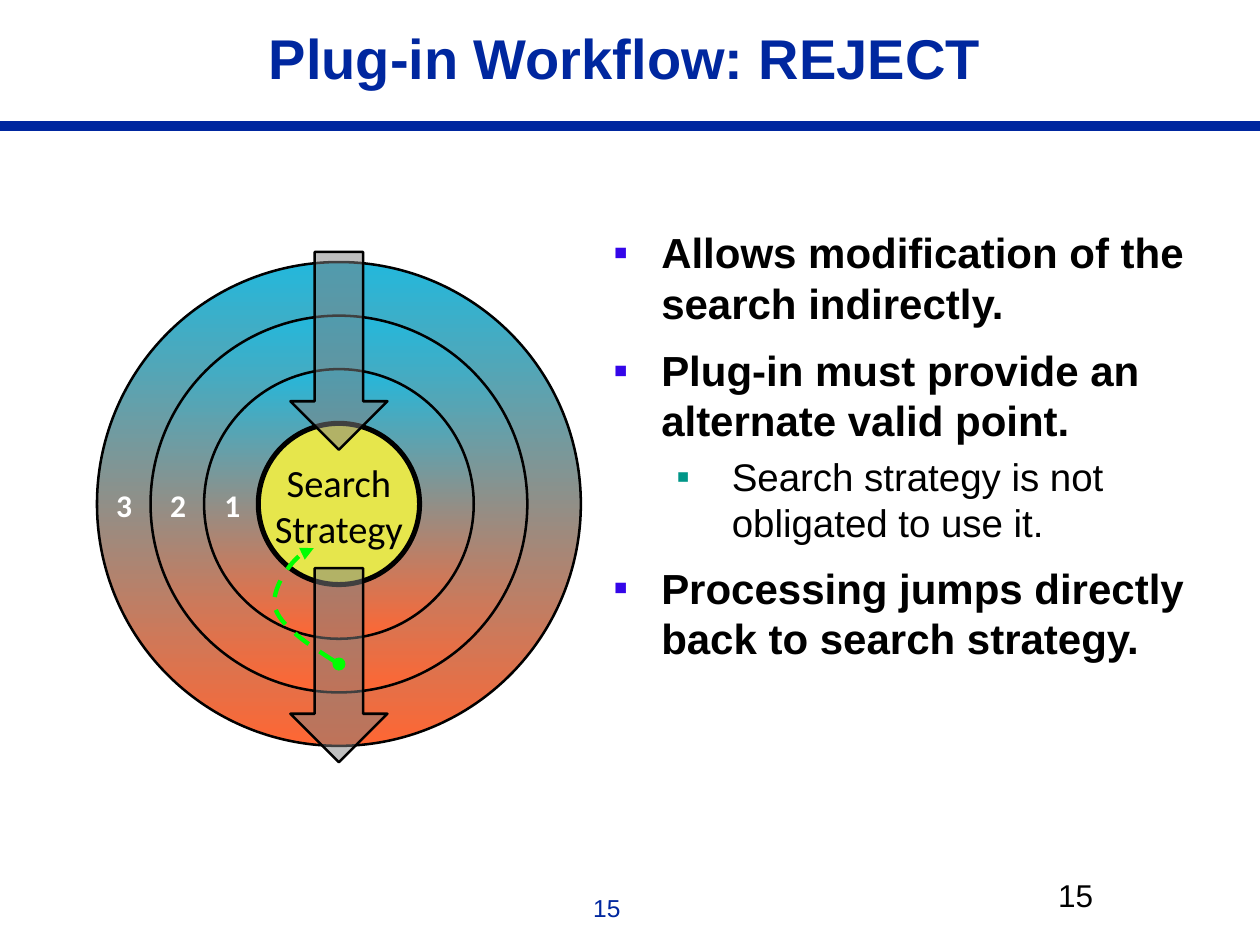
import pptx
import pptx.util
import pptx.dml.color
import pptx.enum.dml
import pptx.enum.shapes
import pptx.enum.text
import pptx.oxml
import pptx.oxml.ns
from pptx.util import Inches

NAVY, BLACK, WHITE, GREEN = "00279F", "000000", "FFFFFF", "00FF00"
CENTER_X, CENTER_Y = 2.69, 4.0
RING_DIAMETERS = (3.84, 2.99, 2.14)
SHAPES = pptx.enum.shapes.MSO_SHAPE
CENTERED = pptx.enum.text.PP_ALIGN.CENTER
MIDDLE = pptx.enum.text.MSO_ANCHOR.MIDDLE


def color(hex_string):
    return pptx.dml.color.RGBColor.from_string(hex_string)


def add_xml(parent, tag, **attributes):
    element = pptx.oxml.parse_xml(f"<a:{tag} {pptx.oxml.ns.nsdecls('a')}/>")
    for key, value in attributes.items():
        element.set(key, value)
    parent.append(element)
    return element


def set_font(paragraph, size, hex_string, bold=False, name="Arial"):
    font = paragraph.font
    font.name, font.size, font.bold = name, pptx.util.Pt(size), bold
    font.color.rgb = color(hex_string)


def set_line(shape, hex_string, width):
    shape.line.color.rgb = color(hex_string)
    shape.line.width = pptx.util.Pt(width)


def set_insets(frame, left, top, right, bottom):
    frame.margin_left, frame.margin_right = Inches(left), Inches(right)
    frame.margin_top, frame.margin_bottom = Inches(top), Inches(bottom)


def add_text_box(slide, left, top, width, height, insets=(0.1, 0.05, 0.1, 0.05)):
    box = slide.shapes.add_textbox(Inches(left), Inches(top), Inches(width), Inches(height))
    frame = box.text_frame
    frame.word_wrap = True
    set_insets(frame, *insets)
    return frame


def add_label(slide, text, place, size, hex_string, bold=False, name="Arial",
              align=None, **box_options):
    frame = add_text_box(slide, *place, **box_options)
    label = frame.paragraphs[0]
    label.text = text
    label.alignment = align
    set_font(label, size, hex_string, bold, name)
    return frame


def add_outlined(slide, preset, left, top, width, height, line_width=1.45):
    shape = slide.shapes.add_shape(
        preset, Inches(left), Inches(top), Inches(width), Inches(height))
    shape.shadow.inherit = False
    set_line(shape, BLACK, line_width)
    return shape


def add_circle(slide, diameter, line_width=1.45):
    return add_outlined(slide, SHAPES.OVAL, CENTER_X - diameter / 2,
                        CENTER_Y - diameter / 2, diameter, diameter, line_width)


def add_ring(slide, diameter):
    ring = add_circle(slide, diameter)
    ring.fill.gradient()
    ring.fill.gradient_angle = 270
    for stop, position, hex_string in zip(
            ring.fill.gradient_stops, (0, 1), ("23B8DC", "FF6633")):
        stop.position = position
        stop.color.rgb = color(hex_string)


def add_core(slide):
    core = add_circle(slide, 1.28, 2.89)
    core.fill.solid()
    core.fill.fore_color.rgb = color("E6E64C")
    frame = core.text_frame
    frame.word_wrap = False
    frame.vertical_anchor = MIDDLE
    set_insets(frame, 0.11, 0.08, 0.11, 0.06)
    frame.text = "Search\nStrategy"
    for word in frame.paragraphs:
        word.alignment = CENTERED
        set_font(word, 22, BLACK, name="Calibri")


def add_flow_arrow(slide, top, height):
    width = 0.77
    arrow = add_outlined(slide, SHAPES.DOWN_ARROW, CENTER_X - width / 2, top, width, height)
    arrow.adjustments[0] = 0.5
    arrow.adjustments[1] = 0.5
    arrow.fill.solid()
    arrow.fill.fore_color.rgb = color("808080")
    fill_color = arrow.fill._xPr.find(".//" + pptx.oxml.ns.qn("a:srgbClr"))
    add_xml(fill_color, "alpha", val="50000")


def bezier(points, steps=16):
    """Points along a cubic curve, without its start."""
    for step in range(1, steps + 1):
        t = step / steps
        weights = ((1 - t) ** 3, 3 * t * (1 - t) ** 2, 3 * t * t * (1 - t), t ** 3)
        yield tuple(Inches(sum(w * p[axis] for w, p in zip(weights, points)))
                    for axis in (0, 1))


def add_jump_back(slide):
    start, turn, end = (2.69, 5.27), (2.18, 4.81), (2.49, 4.35)
    builder = slide.shapes.build_freeform(Inches(start[0]), Inches(start[1]))
    for curve in ((start, (2.45, 5.12), (2.21, 4.96), turn),
                  (turn, (2.15, 4.66), (2.35, 4.37), end)):
        builder.add_line_segments(bezier(curve), close=False)
    jump = builder.convert_to_shape()
    jump.shadow.inherit = False
    jump.fill.background()
    set_line(jump, GREEN, 2.5)
    jump.line.dash_style = pptx.enum.dml.MSO_LINE.DASH
    outline = jump.line._get_or_add_ln()
    add_xml(outline, "headEnd", type="oval")
    add_xml(outline, "tailEnd", type="triangle")


def add_bullets(slide):
    points = (
        (0, "Allows modification of the search indirectly."),
        (0, "Plug-in must provide an alternate valid point."),
        (1, "Search strategy is not obligated to use it."),
        (0, "Processing jumps directly back to search strategy."),
    )
    # per level: indent, hanging, bullet colour, size, bold, space before
    levels = ((0.38, 0.38, "3406E9", 24, True, 9.6),
              (0.94, 0.44, "009688", 22, False, 4.4))
    frame = add_text_box(slide, 4.77, 1.75, 4.73, 4.95)
    for index, (level, text) in enumerate(points):
        indent, hanging, bullet_color, size, bold, space = levels[level]
        point = frame.add_paragraph() if index else frame.paragraphs[0]
        point.text = text
        point.level = level
        if index:
            point.space_before = pptx.util.Pt(space)
        properties = point._p.get_or_add_pPr()
        properties.set("marL", str(Inches(indent)))
        properties.set("indent", str(-Inches(hanging)))
        add_xml(add_xml(properties, "buClr"), "srgbClr", val=bullet_color)
        add_xml(properties, "buFont", typeface="Arial")
        add_xml(properties, "buChar", char="▪")
        set_font(point, size, BLACK, bold)


def add_title(slide):
    rule = slide.shapes.add_connector(pptx.enum.shapes.MSO_CONNECTOR.STRAIGHT,
                                      Inches(10.05), Inches(1), 0, Inches(1))
    set_line(rule, NAVY, 6.13)
    add_xml(rule._element.spPr, "effectLst")
    title = add_label(slide, "Plug-in Workflow: REJECT", (0.25, 0.08, 9.42, 0.83),
                      32, NAVY, True, align=CENTERED)
    title.vertical_anchor = MIDDLE
    title.paragraphs[0].line_spacing = 0.85


def main():
    deck = pptx.Presentation()
    deck.slide_width, deck.slide_height = Inches(10), Inches(7.5)
    slide = deck.slides.add_slide(deck.slide_layouts[6])

    add_title(slide)
    add_label(slide, "15", (4.61, 7.04, 0.44, 0.33), 14, NAVY)
    add_bullets(slide)
    add_label(slide, "15", (8.3, 6.9, 0.61, 0.5), 18, BLACK)

    for diameter in RING_DIAMETERS:
        add_ring(slide, diameter)
    add_core(slide)
    add_flow_arrow(slide, 4.51, 1.54)
    add_flow_arrow(slide, 2, 1.57)
    for number in (1, 2, 3):
        add_label(slide, str(number), (2.16 - 0.43 * number, 3.81, 0.23, 0.39),
                  18, WHITE, True, "Calibri", CENTERED, insets=(0, 0.05, 0, 0.05))
    add_jump_back(slide)

    deck.save("out.pptx")


if __name__ == "__main__":
    main()
